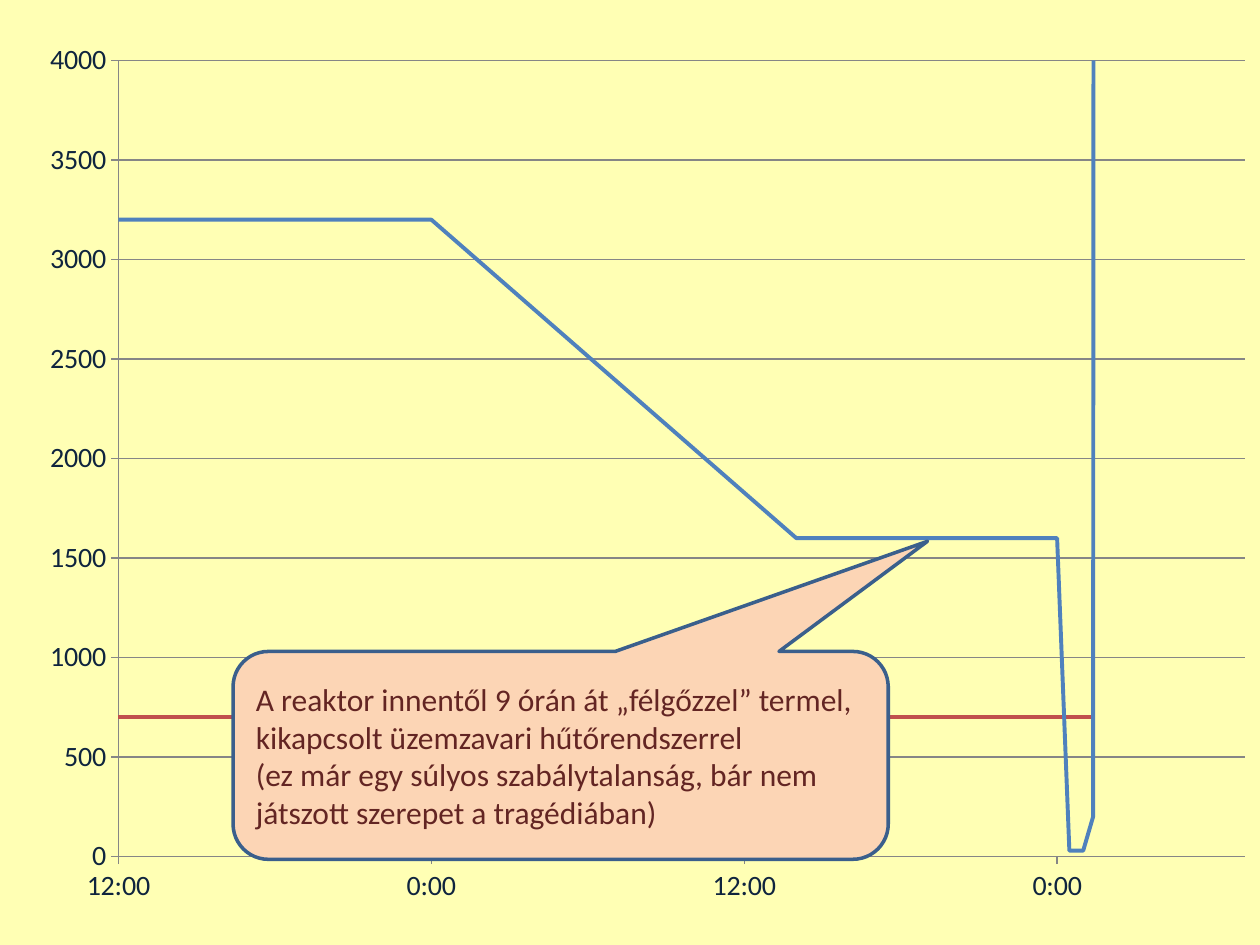
from pptx import Presentation, util as u
from pptx.chart.data import XyChartData
from pptx.dml.color import RGBColor
from pptx.enum import chart as ch, shapes, text
from pptx.oxml import parse_xml
from pptx.oxml.ns import nsdecls

BACKGROUND = RGBColor(0xFF, 0xFF, 0xB4)
GRID = RGBColor(0x86, 0x86, 0x86)
AXIS_TEXT = RGBColor(0x0F, 0x24, 0x3E)
CALLOUT_FILL = RGBColor(0xFC, 0xD5, 0xB5)
CALLOUT_LINE = RGBColor(0x3A, 0x5F, 0x8C)
CALLOUT_TEXT = RGBColor(0x63, 0x25, 0x23)
POWER_LINE = RGBColor(0x4F, 0x81, 0xBD)
LIMIT_LINE = RGBColor(0xC0, 0x50, 0x4D)
FONT = "Calibri"

START_DAY, END_DAY = 31526.5, 31528.3
HOURS = [0, 12, 26, 35.17, 36, 36.47, 37, 37.38, 37.4]
SERIES = [
    ("Series 1", [3200, 3200, 1600, 1600, 1600, 30, 30, 200, 5000], POWER_LINE),
    ("Series 2", [700] * len(HOURS), LIMIT_LINE),
]
CALLOUT = [
    "A reaktor innentől 9 órán át „félgőzzel” termel, kikapcsolt üzemzavari hűtőrendszerrel",
    "(ez már egy súlyos szabálytalanság, bár nem játszott szerepet a tragédiában)",
]
CHART_BOX = (0.2, 0.21, 9.88, 7.11)
PLOT_BOX = (0.94, 0.48, 8.94, 6.32)
CALLOUT_BOX = (1.85, 5.17, 5.2, 1.65)


def inches(box):
    return [u.Inches(v) for v in box]


def set_plot_box(chart):
    left, top, width, height = CHART_BOX
    x, y, w, h = PLOT_BOX
    shares = {"x": (x - left) / width, "y": (y - top) / height, "w": w / width, "h": h / height}
    modes = "".join(f'<c:{k}Mode val="edge"/>' for k in "xy")
    values = "".join(f'<c:{k} val="{v:.4f}"/>' for k, v in shares.items())
    area = chart._chartSpace.chart.plotArea
    for old in area.xpath("c:layout"):
        area.remove(old)
    area.insert(0, parse_xml(
        f'<c:layout {nsdecls("c")}><c:manualLayout><c:layoutTarget val="inner"/>'
        f'{modes}{values}</c:manualLayout></c:layout>'))


def style_axis(axis, low, high, step, number_format):
    axis.minimum_scale, axis.maximum_scale, axis.major_unit = low, high, step
    axis.major_tick_mark = ch.XL_TICK_MARK.OUTSIDE
    axis.minor_tick_mark = ch.XL_TICK_MARK.NONE
    axis.tick_label_position = ch.XL_TICK_LABEL_POSITION.LOW
    axis.tick_labels.number_format = number_format
    axis.tick_labels.number_format_is_linked = False
    font = axis.tick_labels.font
    font.name, font.size, font.color.rgb = FONT, u.Pt(16), AXIS_TEXT
    axis.format.line.color.rgb = GRID
    axis.format.line.width = u.Pt(0.75)


def add_power_chart(s):
    data = XyChartData()
    for name, values, _ in SERIES:
        series = data.add_series(name)
        for hour, value in zip(HOURS, values):
            series.add_data_point(round(START_DAY + hour / 24, 4), value)
    chart = s.shapes.add_chart(
        ch.XL_CHART_TYPE.XY_SCATTER_LINES_NO_MARKERS, *inches(CHART_BOX), data).chart
    chart.has_legend = chart.has_title = False
    chart.font.name, chart.font.size = FONT, u.Pt(10)
    chart.plots[0].vary_by_categories = False
    for series, (_, _, color) in zip(chart.plots[0].series, SERIES):
        series.smooth = False
        series.marker.style = ch.XL_MARKER_STYLE.NONE
        series.format.line.color.rgb = color
        series.format.line.width = u.Pt(2.25)
    style_axis(chart.category_axis, START_DAY, END_DAY, 0.5, "h:mm;@")
    style_axis(chart.value_axis, 0, 4000, 500, "General")
    chart.category_axis.has_major_gridlines = False
    chart.value_axis.has_major_gridlines = True
    grid = chart.value_axis.major_gridlines.format.line
    grid.color.rgb, grid.width = GRID, u.Pt(0.75)
    set_plot_box(chart)


def add_callout(s):
    sp = s.shapes.add_shape(
        shapes.MSO_SHAPE.ROUNDED_RECTANGULAR_CALLOUT, *inches(CALLOUT_BOX))
    for i, value in enumerate((0.56, -1.03, 0.17)):
        sp.adjustments[i] = value
    sp.shadow.inherit = False
    sp.fill.solid()
    sp.fill.fore_color.rgb = CALLOUT_FILL
    sp.line.color.rgb, sp.line.width = CALLOUT_LINE, u.Pt(2)
    tf = sp.text_frame
    tf.word_wrap = True
    tf.vertical_anchor = text.MSO_ANCHOR.MIDDLE
    for i, line in enumerate(CALLOUT):
        p = tf.add_paragraph() if i else tf.paragraphs[0]
        p.alignment = text.PP_ALIGN.LEFT
        r = p.add_run()
        r.text = line
        r.font.name, r.font.size, r.font.color.rgb = FONT, u.Pt(18), CALLOUT_TEXT


def main():
    prs = Presentation()
    prs.slide_width, prs.slide_height = u.Inches(10), u.Inches(7.5)
    s = prs.slides.add_slide(prs.slide_layouts[6])
    s.background.fill.solid()
    s.background.fill.fore_color.rgb = BACKGROUND
    add_power_chart(s)
    add_callout(s)
    prs.save("out.pptx")


if __name__ == "__main__":
    main()
